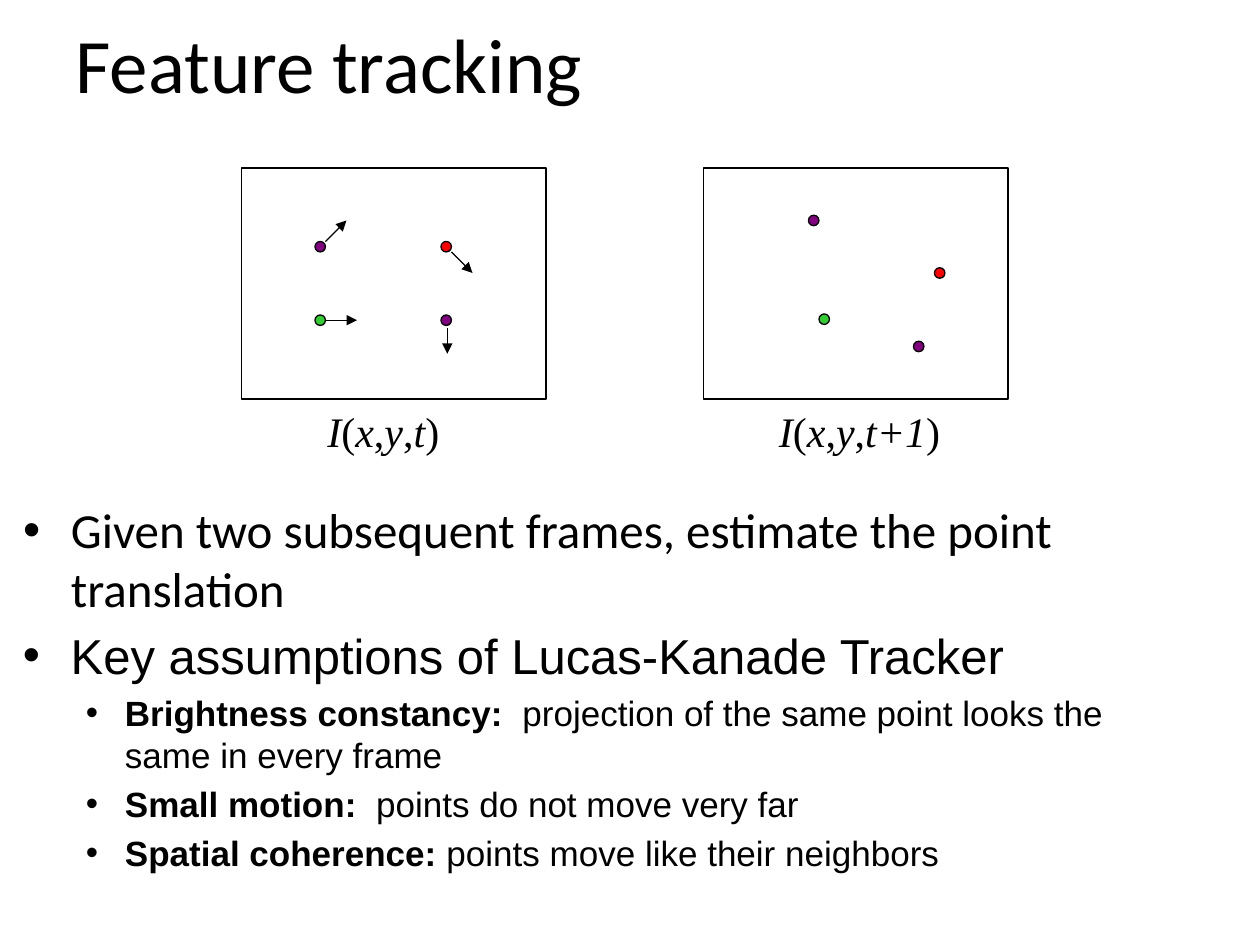
"""Build the feature tracking slide on a grid of 120 columns by 90 rows."""
from dataclasses import dataclass

from lxml import etree
from pptx import Presentation
from pptx.dml.color import RGBColor
from pptx.enum.shapes import MSO_CONNECTOR, MSO_SHAPE
from pptx.enum.text import MSO_ANCHOR, MSO_AUTO_SIZE, PP_ALIGN
from pptx.oxml.ns import qn
from pptx.util import Inches, Pt

RECT, OVAL = MSO_SHAPE.RECTANGLE, MSO_SHAPE.OVAL
STRAIGHT = MSO_CONNECTOR.STRAIGHT
LEFT, TOP, MIDDLE = PP_ALIGN.LEFT, MSO_ANCHOR.TOP, MSO_ANCHOR.MIDDLE
NO_FIT, GROW = MSO_AUTO_SIZE.NONE, MSO_AUTO_SIZE.SHAPE_TO_FIT_TEXT


@dataclass
class Theme:
    black: RGBColor = RGBColor(0, 0, 0)
    white: RGBColor = RGBColor(255, 255, 255)
    purple: RGBColor = RGBColor(128, 0, 128)
    red: RGBColor = RGBColor(255, 0, 0)
    green: RGBColor = RGBColor(51, 204, 51)
    head: str = "Calibri"
    body: str = "Arial"
    math: str = "Times New Roman"
    title: int = 44
    label: int = 24
    levels: tuple = (28, 20)
    line: float = 0.75


T = Theme()
prs = Presentation()
prs.slide_width, prs.slide_height = Inches(10), Inches(7.5)
U = prs.slide_width / 120
s = prs.slides.add_slide(prs.slide_layouts[1])


def grid(*units):
    return [round(u * U) for u in units]


def style(p, size, font):
    p.alignment = LEFT
    p.font.size, p.font.name = Pt(size), font
    p.font.color.rgb = T.black


title, body = s.shapes.title, s.placeholders[1]
title.left, title.top, title.width, title.height = grid(6, 0, 108, 12)
title.text_frame.text = "Feature tracking"
title.text_frame.vertical_anchor = MIDDLE
style(title.text_frame.paragraphs[0], T.title, T.head)
body.left, body.top, body.width, body.height = grid(1, 47, 117, 13)
assumptions = s.shapes.add_textbox(*grid(1, 59, 108, 29))

lists = [
    (body, T.head, [
        (0, "", "Given two subsequent frames, estimate the point translation")]),
    (assumptions, T.body, [
        (0, "", "Key assumptions of Lucas-Kanade Tracker"),
        (1, "Brightness constancy:  ",
         "projection of the same point looks the same in every frame"),
        (1, "Small motion:", "  points do not move very far"),
        (1, "Spatial coherence:", " points move like their neighbors")]),
]
for sp, font, items in lists:
    tf = sp.text_frame
    tf.word_wrap, tf.auto_size, tf.vertical_anchor = True, NO_FIT, TOP
    for i, (level, lead, text) in enumerate(items):
        p = tf.paragraphs[0] if i == 0 else tf.add_paragraph()
        p.level = level
        style(p, T.levels[level], font)
        p.space_before = Pt(T.levels[level] * 0.2)
        if lead:
            r = p.add_run()
            r.text, r.font.bold = lead, True
        p.add_run().text = text
        pPr = p._p.get_or_add_pPr()
        margin, hang = ((0.38, 0.38), (0.81, 0.31))[level]
        pPr.set("marL", str(Inches(margin)))
        pPr.set("indent", str(-Inches(hang)))
        bullet_font = etree.Element(qn("a:buFont"), typeface="Arial")
        bullet = etree.Element(qn("a:buChar"), char="•")
        pPr.find(qn("a:spcBef")).addnext(bullet_font)
        bullet_font.addnext(bullet)

colors = (T.purple, T.red, T.green, T.purple)
frames = [
    (23, [(30, 23), (42, 23), (30, 30), (42, 30)], 30, 13.2, "I ( x , y , t )"),
    (67, [(77, 20.5), (89, 25.5), (78, 29.9), (87, 32.5)], 73, 17.9,
     "I ( x , y , t+1 )"),
]
for left, points, label_left, label_width, label in frames:
    outlines = [(RECT, (left, 16, 29, 22), T.white)]
    outlines += [(OVAL, (x, y, 1, 1), c) for (x, y), c in zip(points, colors)]
    for kind, box, color in outlines:
        sp = s.shapes.add_shape(kind, *grid(*box))
        sp.shadow.inherit = False
        sp.fill.solid()
        sp.fill.fore_color.rgb = color
        sp.line.color.rgb, sp.line.width = T.black, Pt(T.line)
    tf = s.shapes.add_textbox(*grid(label_left, 38, label_width, 6.1)).text_frame
    tf.word_wrap, tf.auto_size = False, GROW
    p = tf.paragraphs[0]
    style(p, T.label, T.math)
    for token in label.split():
        r = p.add_run()
        r.text, r.font.italic = token, token not in "(,)"

motions = [(31, 23, 33, 21), (31, 30.5, 34, 30.5), (43, 24, 45, 26),
           (42.6, 31.2, 42.6, 33.7)]
for ends in motions:
    arrow = s.shapes.add_connector(STRAIGHT, *grid(*ends))
    arrow.line.color.rgb, arrow.line.width = T.black, Pt(T.line)
    etree.SubElement(arrow.line._get_or_add_ln(), qn("a:tailEnd"), type="triangle")
    etree.SubElement(arrow._element.spPr, qn("a:effectLst"))

prs.save("out.pptx")
